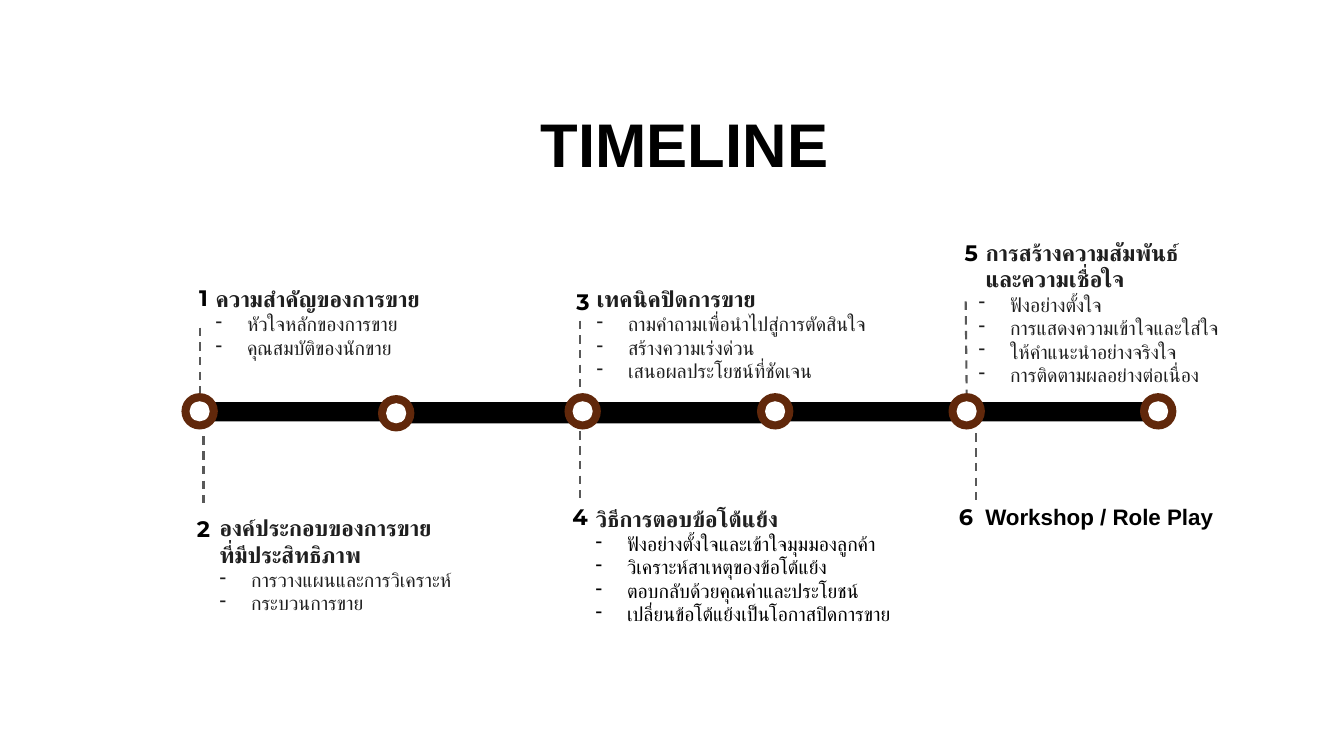
from dataclasses import dataclass
from typing import Optional

import pptx
import pptx.util
import pptx.dml.color
import pptx.enum.dml
import pptx.enum.shapes
import pptx.enum.text
import pptx.oxml
import pptx.oxml.ns

Pt = pptx.util.Pt
SHAPE = pptx.enum.shapes.MSO_SHAPE
ALIGN = pptx.enum.text.PP_ALIGN
ANCHOR = pptx.enum.text.MSO_ANCHOR

COLORS = {"black": "000000", "white": "FFFFFF", "ring": "61280B",
          "dash": "595959", "text": "1F1F1F"}
RING, HOLE = 26, 14.4
NUMBER_W, NUMBER_H = 40, 26
BULLET_INDENT = 22.5


@dataclass
class Bar:
    left: float
    top: float
    width: float
    height: float


@dataclass
class Stop:
    left: float
    top: float


@dataclass
class Dash:
    x: float
    top: float
    bottom: float
    stop: Optional[int] = None


@dataclass
class Topic:
    number: str
    number_x: float
    number_y: float
    left: float
    top: float
    width: float
    height: float
    headings: list[str]
    points: list[str]
    heading_color: str = "text"
    point_color: str = "text"
    heading_indent: float = 0


BARS = [Bar(136.1, 287.3, 688.3, 13.7), Bar(279.4, 287.3, 273.6, 15.1)]
STOPS = [Stop(129.6, 280.8), Stop(270, 282.2), Stop(403.2, 280.8),
         Stop(540.7, 280.8), Stop(677.5, 280.8), Stop(814.3, 280.8)]
DASHES = [Dash(142.6, 234, 280.8, 0), Dash(145.4, 311.8, 359.3),
          Dash(414, 229, 276.5), Dash(414, 308.2, 355.7),
          Dash(689.8, 215.3, 280.8, 4), Dash(697, 309.6, 357.1)]
TOPICS = [
    Topic("1", 145.4, 212.4, 146.9, 200.2, 197.3, 60.5,
          ["ความสำคัญของการขาย"],
          ["หัวใจหลักของการขาย", "คุณสมบัติของนักขาย"]),
    Topic("2", 145.4, 377.3, 149.8, 363.6, 376.6, 118.8,
          ["องค์ประกอบของการขาย", "ที่มีประสิทธิภาพ"],
          ["การวางแผนและการวิเคราะห์", "กระบวนการขาย"]),
    Topic("3", 416.5, 215.6, 419, 200.2, 234, 99.4,
          ["เทคนิคปิดการขาย"],
          ["ถามคำถามเพื่อนำไปสู่การตัดสินใจ", "สร้างความเร่งด่วน",
           "เสนอผลประโยชน์ที่ชัดเจน"]),
    Topic("4", 414.4, 369, 418.3, 357.1, 467.3, 94.3,
          ["วิธีการตอบข้อโต้แย้ง"],
          ["ฟังอย่างตั้งใจและเข้าใจมุมมองลูกค้า", "วิเคราะห์สาเหตุของข้อโต้แย้ง",
           "ตอบกลับด้วยคุณค่าและประโยชน์", "เปลี่ยนข้อโต้แย้งเป็นโอกาสปิดการขาย"],
          point_color="black"),
    Topic("5", 693.7, 180.4, 691.9, 167, 234, 174.2,
          ["การสร้างความสัมพันธ์", "และความเชื่อใจ"],
          ["ฟังอย่างตั้งใจ", "การแสดงความเข้าใจและใส่ใจ",
           "ให้คำแนะนำอย่างจริงใจ", "การติดตามผลอย่างต่อเนื่อง"],
          heading_indent=5),
    Topic("6", 690, 369, 696.7, 355.7, 191, 26.6,
          ["Workshop / Role Play"], [], heading_color="black"),
]


def rgb(name: str) -> pptx.dml.color.RGBColor:
    return pptx.dml.color.RGBColor.from_string(COLORS[name])


def add_run(p, text: str, size: float, color: str,
            bold: bool = True, font: str = "Arial") -> None:
    r = p.add_run()
    r.text = text
    r.font.name = font
    r.font.size = Pt(size)
    r.font.bold = bold
    r.font.color.rgb = rgb(color)


def add_solid(s, kind, left: float, top: float,
              width: float, height: float, color: str):
    sp = s.shapes.add_shape(kind, Pt(left), Pt(top), Pt(width), Pt(height))
    sp.shadow.inherit = False
    sp.fill.solid()
    sp.fill.fore_color.rgb = rgb(color)
    sp.line.fill.background()
    return sp


def add_stop(s, stop: Stop):
    gap = (RING - HOLE) / 2
    ring = add_solid(s, SHAPE.OVAL, stop.left, stop.top, RING, RING, "ring")
    add_solid(s, SHAPE.OVAL, stop.left + gap, stop.top + gap, HOLE, HOLE, "white")
    return ring


def add_dash(s, dash: Dash, rings: list) -> None:
    line = s.shapes.add_connector(pptx.enum.shapes.MSO_CONNECTOR.STRAIGHT,
                                  Pt(dash.x), Pt(dash.top), Pt(dash.x), Pt(dash.bottom))
    if dash.stop is not None:
        line.end_connect(rings[dash.stop], 0)
    line.line.color.rgb = rgb("dash")
    line.line.width = Pt(1.5)
    line.line.dash_style = pptx.enum.dml.MSO_LINE.DASH
    line._element.spPr.append(pptx.oxml.parse_xml(
        f'<a:effectLst {pptx.oxml.ns.nsdecls("a")}/>'))


def set_indent(p, left: float, first: float = 0, bullet: str = "") -> None:
    pPr = p._p.get_or_add_pPr()
    pPr.set("marL", str(Pt(left)))
    pPr.set("indent", str(Pt(first)))
    if bullet:
        pPr.append(pptx.oxml.parse_xml(
            f'<a:buChar {pptx.oxml.ns.nsdecls("a")} char="{bullet}"/>'))


def add_number(s, topic: Topic) -> None:
    sp = s.shapes.add_textbox(Pt(topic.number_x - NUMBER_W / 2),
                              Pt(topic.number_y - NUMBER_H / 2),
                              Pt(NUMBER_W), Pt(NUMBER_H))
    tf = sp.text_frame
    tf.vertical_anchor = ANCHOR.MIDDLE
    tf.word_wrap = True
    p = tf.paragraphs[0]
    p.alignment = ALIGN.CENTER
    add_run(p, topic.number, 16, "black", font="Montserrat")


def add_topic(s, topic: Topic) -> None:
    add_number(s, topic)
    sp = s.shapes.add_textbox(Pt(topic.left), Pt(topic.top),
                              Pt(topic.width), Pt(topic.height))
    tf = sp.text_frame
    tf.word_wrap = True
    for i, heading in enumerate(topic.headings):
        p = tf.add_paragraph() if i else tf.paragraphs[0]
        set_indent(p, topic.heading_indent)
        add_run(p, heading, 16, topic.heading_color)
    for point in topic.points:
        p = tf.add_paragraph()
        set_indent(p, BULLET_INDENT, -BULLET_INDENT, "-")
        add_run(p, point, 14, topic.point_color, bold=False)


def add_title(s) -> None:
    sp = s.shapes.title
    sp.left, sp.top, sp.width, sp.height = Pt(246.2), Pt(72), Pt(486), Pt(60.5)
    tf = sp.text_frame
    tf.vertical_anchor = ANCHOR.TOP
    p = tf.paragraphs[0]
    p.alignment = ALIGN.CENTER
    add_run(p, "TIMELINE", 44, "black")


def main() -> None:
    prs = pptx.Presentation()
    prs.slide_width, prs.slide_height = Pt(960), Pt(540)
    s = prs.slides.add_slide(prs.slide_layouts[5])
    add_title(s)
    for bar in BARS:
        add_solid(s, SHAPE.RECTANGLE, bar.left, bar.top, bar.width, bar.height, "black")
    rings = [add_stop(s, stop) for stop in STOPS]
    for dash in DASHES:
        add_dash(s, dash, rings)
    for topic in TOPICS:
        add_topic(s, topic)
    prs.save("out.pptx")


if __name__ == "__main__":
    main()
